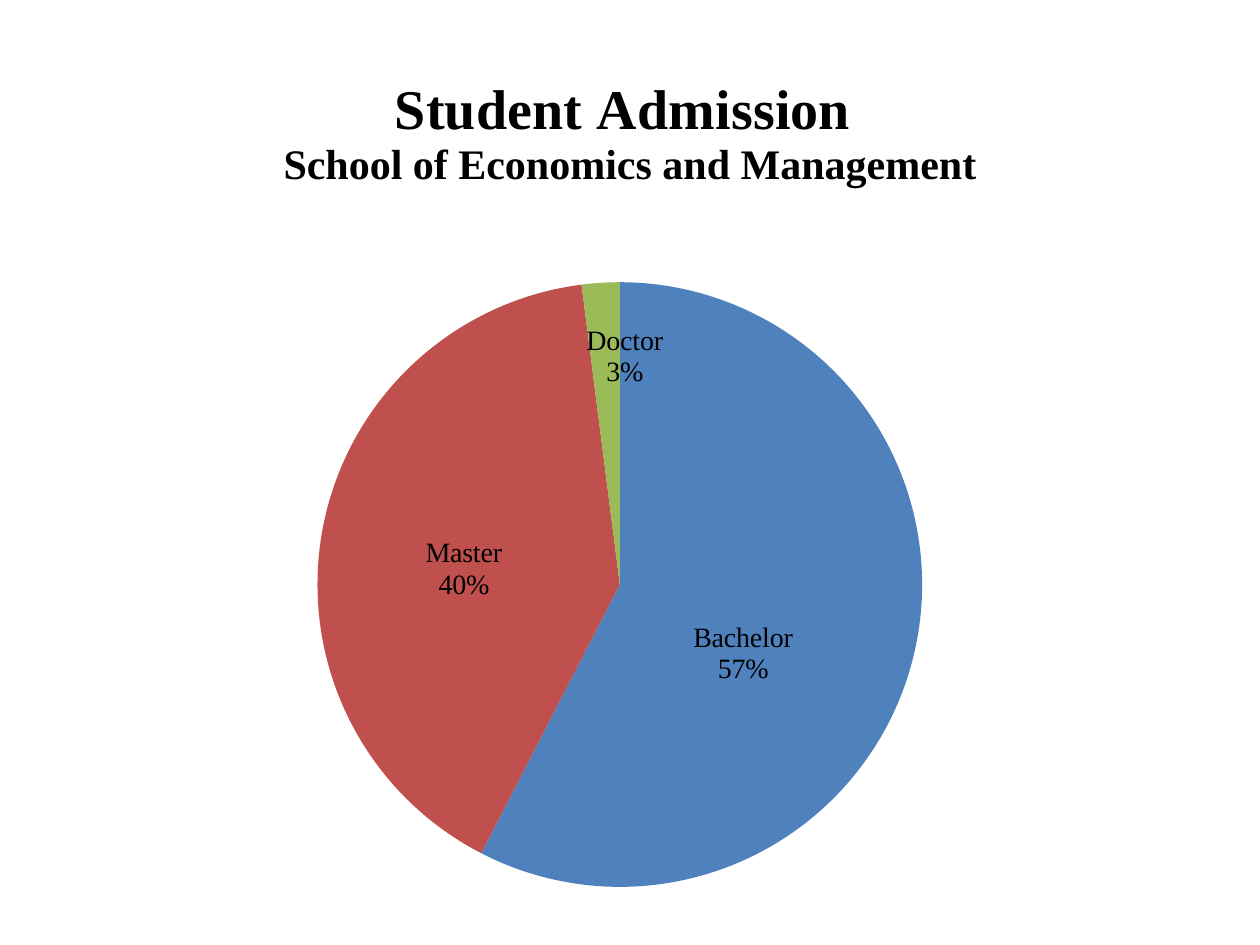
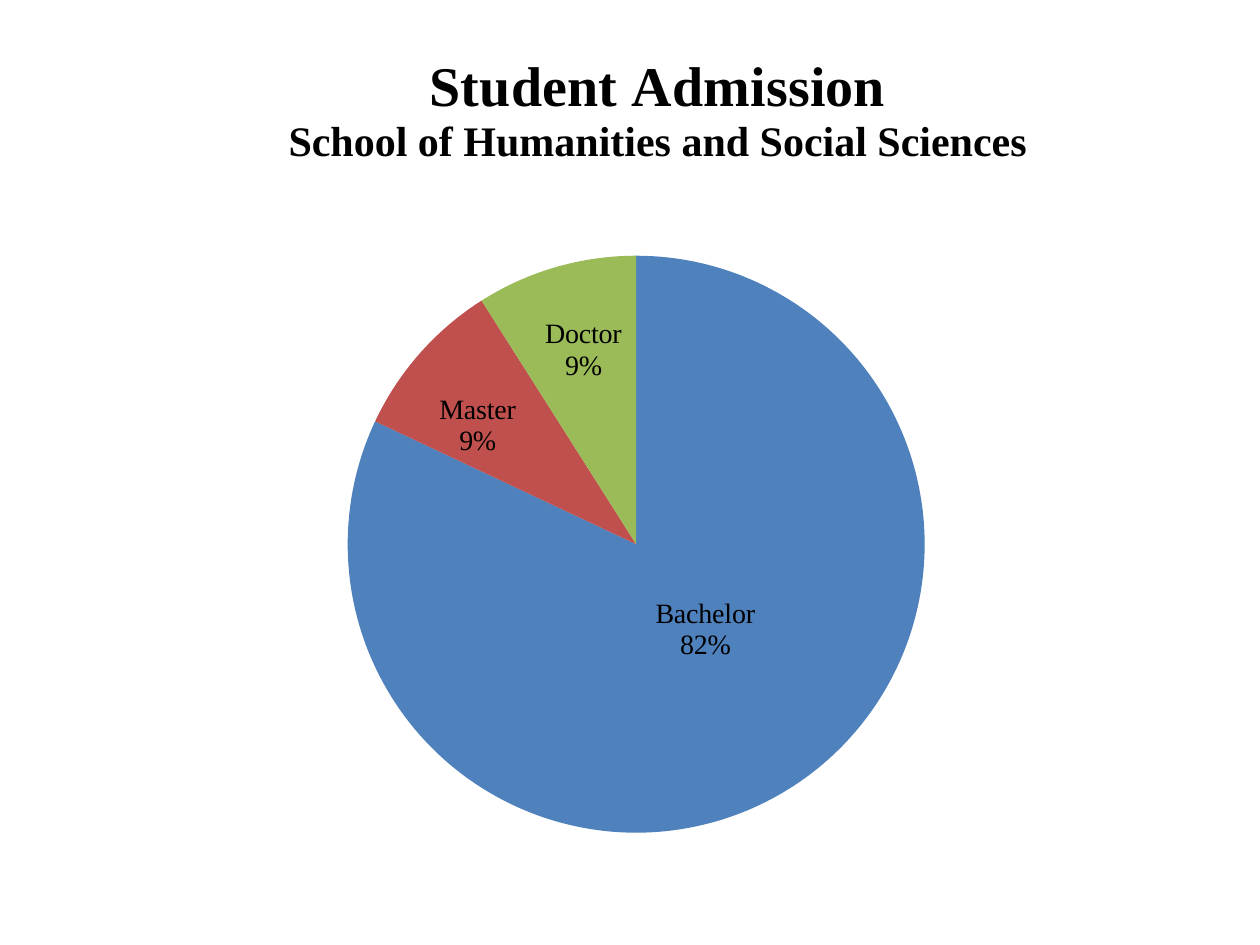
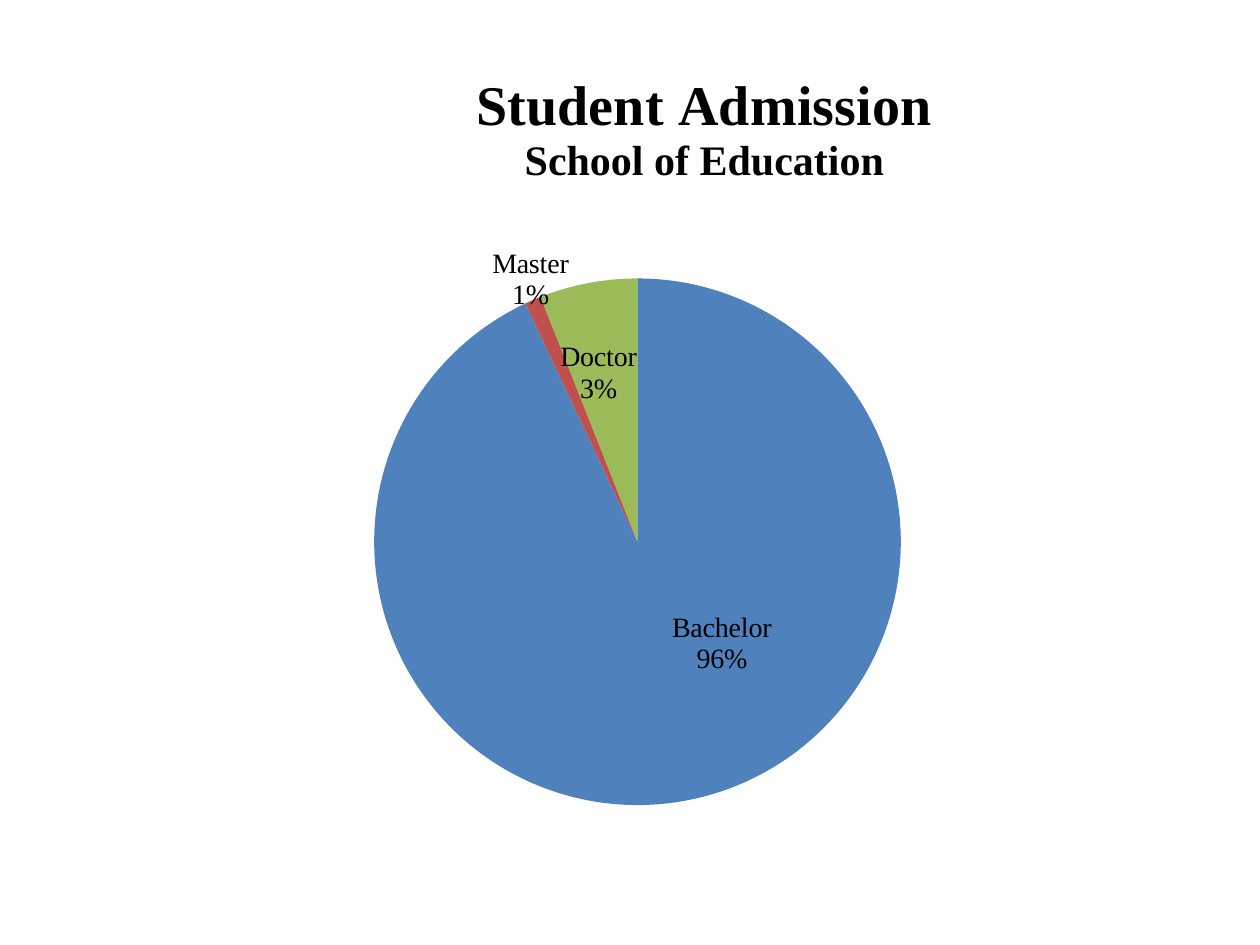
from math import cos, pi, sin

from lxml import etree
from pptx import Presentation
from pptx.chart.data import CategoryChartData
from pptx.dml.color import RGBColor
from pptx.enum.chart import XL_CHART_TYPE, XL_LABEL_POSITION
from pptx.oxml.ns import qn
from pptx.util import Inches, Pt

PIE = XL_CHART_TYPE.PIE
BEST = XL_LABEL_POSITION.BEST_FIT

BLACK = RGBColor(0x00, 0x00, 0x00)
BLUE = RGBColor(0x4F, 0x81, 0xBD)
RED = RGBColor(0xC0, 0x50, 0x4D)
GREEN = RGBColor(0x9B, 0xBB, 0x59)
FILLS = [BLUE, RED, GREEN]
FONT = "Times New Roman"

HEAD = "Student Admission"
LEVELS = ["Bachelor", "Master", "Doctor"]
WIDTHS = [0.79, 0.61, 0.61]  # label widths in inches
HIGH = 0.5                   # label height
GAP = 0.06                   # from the rim to an outside label

# Per slide, in inches: frame, title corner, pie centre and radius, label centres
SLIDES = [
    dict(title=f"{HEAD} \nSchool of Economics and Management",
         vals=[57, 40, 2], shares=[57, 40, 3],
         frame=(0.23, 0.39, 9.53, 6.8), head=(2.22, 0.58),
         pie=(4.92, 4.64, 2.4),
         spots=[(5.9, 5.19), (3.68, 4.52), (4.96, 2.83)]),
    dict(title=f"{HEAD}\nSchool of Humanities and Social Sciences",
         vals=[82, 9, 9], shares=[82, 9, 9],
         frame=(0.5, 0.23, 9, 6.88), head=(2.26, 0.4),
         pie=(5.05, 4.32, 2.29),
         spots=[(5.6, 5.0), (3.79, 3.38), (4.63, 2.78)]),
    dict(title=f"{HEAD}\nSchool of Education",
         vals=[93, 1, 6], shares=[96, 1, 3],
         frame=(0.31, 0.39, 9.5, 6.67), head=(3.75, 0.55),
         pie=(5.06, 4.3, 2.09),
         spots=[(5.73, 5.11), (4.21, 2.22), (4.75, 2.96)]),
]


def lay_out(node, index, **parts):
    """Give a chart part a manual layout, in fractions of the frame."""
    for old in node.findall(qn("c:layout")):
        node.remove(old)
    layout = etree.Element(qn("c:layout"))
    manual = etree.SubElement(layout, qn("c:manualLayout"))
    for tag, val in parts.items():
        etree.SubElement(manual, qn("c:" + tag)).set("val", str(val))
    node.insert(index, layout)


def style(frame, sizes, bold):
    """Format each paragraph of a chart text with its own size."""
    for para, size in zip(frame.paragraphs, sizes):
        for run in para.runs:
            run.font.name = FONT
            run.font.size = Pt(size)
            run.font.bold = bold
            run.font.color.rgb = BLACK


prs = Presentation()
prs.slide_width = Inches(10)
prs.slide_height = Inches(7.5)

for item in SLIDES:
    slide = prs.slides.add_slide(prs.slide_layouts[6])
    left, top, wide, tall = item["frame"]
    mid_x, mid_y, rad = item["pie"]

    # Chart
    data = CategoryChartData()
    data.categories = LEVELS
    data.add_series(HEAD, item["vals"])
    chart = slide.shapes.add_chart(
        PIE, *[Inches(n) for n in item["frame"]], data).chart
    chart.has_legend = False
    chart.font.name = FONT
    chart.font.size = Pt(16)
    chart.font.color.rgb = BLACK
    plot = chart.plots[0]
    plot.vary_by_categories = True
    root = chart.element

    # Title
    frame = chart.chart_title.text_frame
    frame.text = item["title"]
    style(frame, [32, 24], True)
    x, y = item["head"]
    lay_out(root.xpath(".//c:title")[0], 1, xMode="edge", yMode="edge",
            x=(x - left) / wide, y=(y - top) / tall)

    # Pie area
    lay_out(root.xpath(".//c:plotArea")[0], 0, layoutTarget="inner",
            xMode="edge", yMode="edge",
            x=(mid_x - rad - left) / wide, y=(mid_y - rad - top) / tall,
            w=2 * rad / wide, h=2 * rad / tall)

    # Slices and labels
    total = sum(item["vals"])
    done = 0
    for i, val in enumerate(item["vals"]):
        point = plot.series[0].points[i]
        point.format.fill.solid()
        point.format.fill.fore_color.rgb = FILLS[i]
        label = point.data_label
        label.text_frame.text = f"{LEVELS[i]}\n{item['shares'][i]}%"
        style(label.text_frame, [16, 16], False)
        label.position = BEST

        # Move from the default place outside the rim to the wanted spot
        turn = 2 * pi * (done + val / 2) / total
        done += val
        dx, dy = sin(turn), -cos(turn)
        side = 0 if abs(dx) < 0.087 else dx / abs(dx)
        rise = 0 if abs(dy) < 0.087 else dy / abs(dy)
        base_x = mid_x + (rad + GAP) * dx + side * WIDTHS[i] / 2
        base_y = mid_y + (rad + GAP) * dy + rise * HIGH / 2
        x, y = item["spots"][i]
        lay_out(root.xpath(".//c:dLbl")[i], 1,
                x=(x - base_x) / wide, y=(y - base_y) / tall)

    for lines in root.xpath(".//c:showLeaderLines"):
        lines.set("val", "0")

prs.save("out.pptx")
